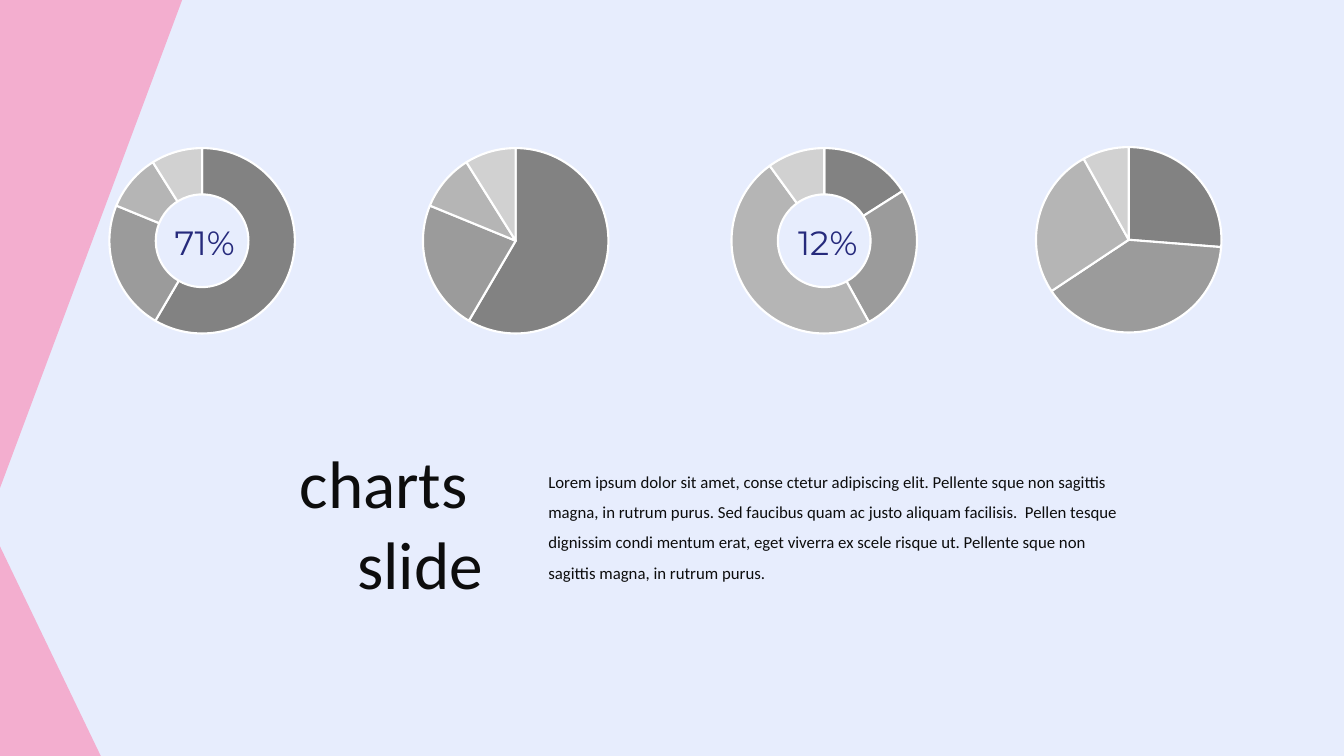
import pptx
import pptx.chart.data
import pptx.dml.color
import pptx.enum.chart
import pptx.enum.shapes
import pptx.enum.text
import pptx.oxml
import pptx.oxml.ns
import pptx.util

Inches = pptx.util.Inches
Pt = pptx.util.Pt
RGBColor = pptx.dml.color.RGBColor
ChartType = pptx.enum.chart.XL_CHART_TYPE
Align = pptx.enum.text.PP_ALIGN
qn = pptx.oxml.ns.qn

BACKGROUND = RGBColor(0xE7, 0xED, 0xFD)
PINK = RGBColor(0xF3, 0xAE, 0xCF)
INK = RGBColor(0x0D, 0x0D, 0x0D)
NAVY = RGBColor(0x26, 0x2A, 0x7C)
BLACK = RGBColor(0, 0, 0)
WHITE = RGBColor(0xFF, 0xFF, 0xFF)
GREYS = [RGBColor(level, level, level) for level in (0x82, 0x9B, 0xB5, 0xD1)]

BODY = (
    "Lorem ipsum dolor sit amet, conse ctetur adipiscing elit. Pellente sque non sagittis "
    "magna, in rutrum purus. Sed faucibus quam ac justo aliquam facilisis.  Pellen tesque "
    "dignissim condi mentum erat, eget viverra ex scele risque ut. Pellente sque non "
    "sagittis magna, in rutrum purus."
)


class SlideBuilder:
    font = "Calibri"
    chart_height = 2.12
    pie_diameter = 1.84
    hole_size = 75

    def __init__(self, slide):
        self.slide = slide
        slide.background.fill.solid()
        slide.background.fill.fore_color.rgb = BACKGROUND

    def corner(self, left, top, width, height, at_top=False):
        shape = self.slide.shapes.add_shape(
            pptx.enum.shapes.MSO_SHAPE.RIGHT_TRIANGLE,
            Inches(left), Inches(top), Inches(width), Inches(height))
        shape.shadow.inherit = False
        shape.fill.solid()
        shape.fill.fore_color.rgb = PINK
        shape.line.fill.background()
        if at_top:
            shape.rotation = 180
            shape._element.spPr.find(qn("a:xfrm")).set("flipH", "1")

    def text(self, left, top, width, height, lines, size, color=INK, font=None,
             align=Align.LEFT, spacing=None):
        box = self.slide.shapes.add_textbox(
            Inches(left), Inches(top), Inches(width), Inches(height))
        frame = box.text_frame
        frame.word_wrap = True
        for index, line in enumerate(lines):
            paragraph = frame.add_paragraph() if index else frame.paragraphs[0]
            paragraph.alignment = align
            if spacing:
                paragraph.line_spacing = spacing
            run = paragraph.add_run()
            run.text = line
            run.font.size = Pt(size)
            run.font.name = font or self.font
            run.font.color.rgb = color

    def chart(self, kind, left, top, width, values):
        data = pptx.chart.data.CategoryChartData()
        data.categories = ["1", "2", "3", "4"]
        data.add_series("Series 1", values)
        chart = self.slide.shapes.add_chart(
            kind, Inches(left), Inches(top), Inches(width),
            Inches(self.chart_height), data).chart
        chart.has_title = False
        chart.has_legend = False
        chart.font.name = self.font
        chart.font.size = Pt(10)
        chart.font.color.rgb = BLACK
        plot = chart.plots[0]
        plot.vary_by_categories = True
        for index, grey in enumerate(GREYS):
            style = plot.series[0].points[index].format
            style.fill.solid()
            style.fill.fore_color.rgb = grey
            style.line.color.rgb = WHITE
            style.line.width = Pt(1.5)
        plot_area = chart._chartSpace.find(".//" + qn("c:plotArea"))
        for hole in plot_area.iter(qn("c:holeSize")):
            hole.set("val", str(self.hole_size))
        self.center_plot(plot_area, width)

    def center_plot(self, plot_area, width):
        for layout in plot_area.findall(qn("c:layout")):
            plot_area.remove(layout)
        share_x = self.pie_diameter / width
        share_y = self.pie_diameter / self.chart_height
        plot_area.insert(0, pptx.oxml.parse_xml(
            f'<c:layout {pptx.oxml.ns.nsdecls("c")}><c:manualLayout>'
            '<c:layoutTarget val="inner"/><c:xMode val="edge"/><c:yMode val="edge"/>'
            f'<c:x val="{(1 - share_x) / 2:.4f}"/><c:y val="{(1 - share_y) / 2:.4f}"/>'
            f'<c:w val="{share_x:.4f}"/><c:h val="{share_y:.4f}"/>'
            '</c:manualLayout></c:layout>'))


def main():
    presentation = pptx.Presentation()
    presentation.slide_width = Inches(13.33)
    presentation.slide_height = Inches(7.5)
    builder = SlideBuilder(presentation.slides.add_slide(presentation.slide_layouts[6]))

    builder.corner(0, 5.42, 1, 2.08)
    builder.corner(0, -0.01, 1.81, 4.85, at_top=True)

    builder.text(2.12, 4.33, 2.77, 1.72, ["charts ", "slide"], 48, align=Align.RIGHT)
    builder.text(5.34, 4.53, 5.87, 1.31, [BODY], 12, spacing=1.5)

    for kind, left, top, width, values in (
        (ChartType.DOUGHNUT, 0.62, 1.33, 2.77, (59, 23, 10, 9)),
        (ChartType.PIE, 3.71, 1.33, 2.81, (59, 23, 10, 9)),
        (ChartType.DOUGHNUT, 6.79, 1.33, 2.77, (16, 26, 48, 10)),
        (ChartType.PIE, 9.79, 1.32, 2.81, (26, 39, 26, 8)),
    ):
        builder.chart(kind, left, top, width, values)

    for left, label in ((7.69, "12%"), (1.51, "71%")):
        builder.text(left, 2.15, 1.04, 0.5, [label], 24, NAVY, "Montserrat", Align.CENTER)

    presentation.save("out.pptx")


if __name__ == "__main__":
    main()
